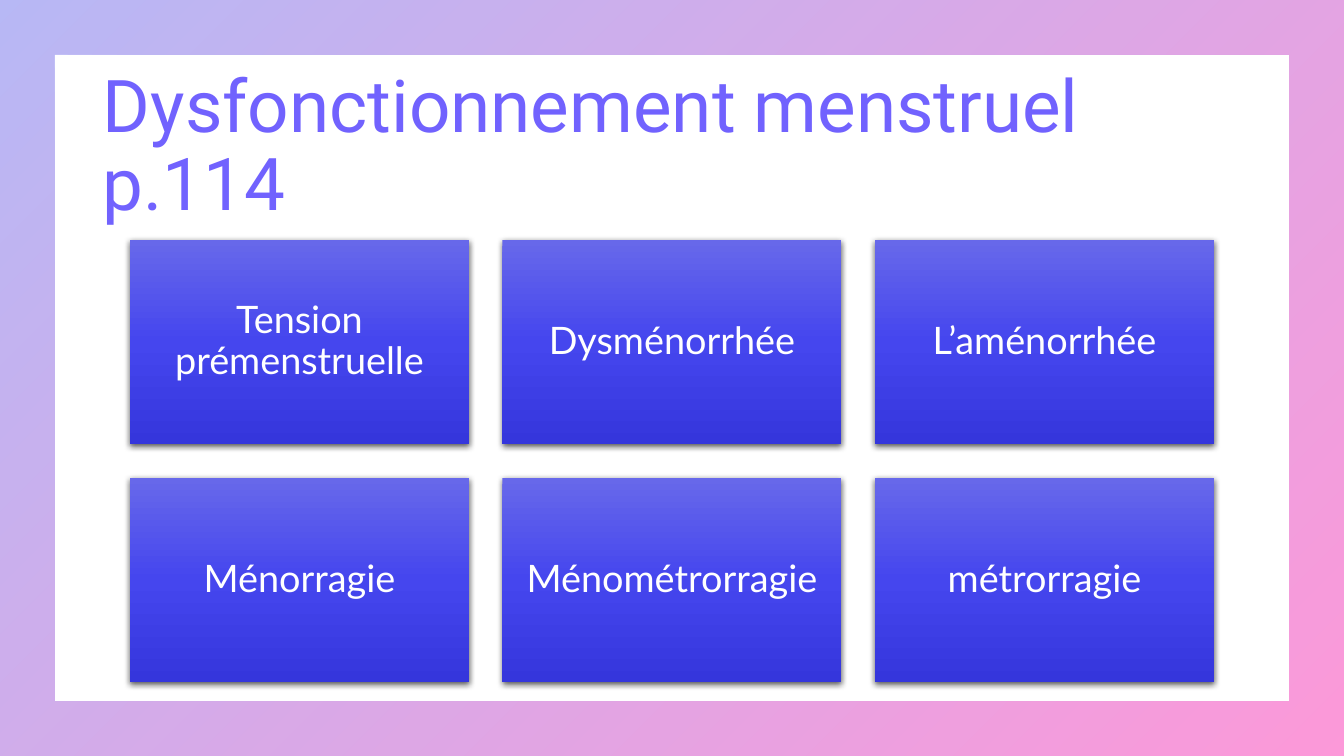
from pptx import Presentation
from pptx.dml.color import RGBColor
from pptx.enum.shapes import MSO_SHAPE
from pptx.enum.text import MSO_ANCHOR, PP_ALIGN
from pptx.oxml import parse_xml
from pptx.oxml.ns import nsdecls, qn
from pptx.util import Pt

FRAME, RECT = MSO_SHAPE.FRAME, MSO_SHAPE.RECTANGLE
MIDDLE, LEFT, CENTER = MSO_ANCHOR.MIDDLE, PP_ALIGN.LEFT, PP_ALIGN.CENTER
PX = 914400 / 100.8  # EMU in one px

# Gradient stops are (position %, colour, opacity %)
THEME = {
    "background": RGBColor(255, 255, 255),
    "frame": [(0, "4D4EE6", 40), (100, "F900A0", 40)],
    "tile": [(0, "6768EA", 100), (50, "4546EE", 100), (100, "3536DC", 100)],
    "title": [(0, "7162FE", 100), (100, "F900A0", 70)],
    "title_font": {"name": "Roboto", "size": Pt(52)},
    "tile_font": {"name": "Lato", "size": Pt(27)},
    "tile_text": RGBColor(255, 255, 255),
}


def set_gradient(s, fill, stops, angle):
    """Give the shape's only gradient its stops and clockwise angle."""
    fill.gradient()
    grad = s.element.find(".//" + qn("a:gradFill"))
    for child in list(grad):
        grad.remove(child)
    xml = "".join(
        f'<a:gs pos="{pos * 1000}"><a:srgbClr val="{color}">'
        f'<a:alpha val="{alpha * 1000}"/></a:srgbClr></a:gs>'
        for pos, color, alpha in stops)
    grad.append(parse_xml(f'<a:gsLst {nsdecls("a")}>{xml}</a:gsLst>'))
    grad.append(parse_xml(
        f'<a:lin {nsdecls("a")} ang="{angle * 60000}" scaled="0"/>'))


def write(s, text, font, align, margin):
    """Write one wrapped, vertically centred paragraph and return its run."""
    tf = s.text_frame
    frame_format = {"word_wrap": True, "vertical_anchor": MIDDLE,
                    "margin_left": margin, "margin_right": margin}
    for name, value in frame_format.items():
        setattr(tf, name, value)
    p = tf.paragraphs[0]
    p.alignment, p.line_spacing = align, 0.9
    r = p.add_run()
    r.text = text
    for name, value in font.items():
        setattr(r.font, name, value)
    return r


prs = Presentation()
prs.slide_width, prs.slide_height = round(1344 * PX), round(756 * PX)
slide = prs.slides.add_slide(prs.slide_layouts[6])
slide.background.fill.solid()
slide.background.fill.fore_color.rgb = THEME["background"]

# Border frame
s = slide.shapes.add_shape(FRAME, 0, 0, prs.slide_width, prs.slide_height)
s.adjustments[0] = 0.072
s.shadow.inherit = False
s.line.fill.background()
set_gradient(s, s.fill, THEME["frame"], 45)

# Title
s = slide.shapes.add_textbox(
    *(round(v * PX) for v in (93, 75, 1159, 146)))
r = write(s, "Dysfonctionnement menstruel p.114", THEME["title_font"],
          LEFT, round(10 * PX))
set_gradient(s, r.font.fill, THEME["title"], 0)

# Grid of tiles
COLUMNS = 3
GRID_LEFT, GRID_RIGHT, GRID_TOP = 130, 1214, 240
TILE_W, TILE_H, PITCH_Y = 339, 204, 238
PITCH_X = (GRID_RIGHT - GRID_LEFT - TILE_W) / (COLUMNS - 1)
disorders = ["Tension prémenstruelle", "Dysménorrhée", "L’aménorrhée",
             "Ménorragie", "Ménométrorragie", "métrorragie"]

for i, disorder in enumerate(disorders):
    row, col = divmod(i, COLUMNS)
    box = (GRID_LEFT + col * PITCH_X, GRID_TOP + row * PITCH_Y, TILE_W, TILE_H)
    s = slide.shapes.add_shape(RECT, *(round(v * PX) for v in box))
    s.line.fill.background()
    set_gradient(s, s.fill, THEME["tile"], 90)
    s.shadow.inherit = False
    s.element.spPr.find(qn("a:effectLst")).append(parse_xml(
        f'<a:outerShdw {nsdecls("a")} blurRad="{Pt(4.5)}" dist="{Pt(1.5)}" '
        'dir="5400000" algn="ctr" rotWithShape="0"><a:srgbClr val="000000">'
        '<a:alpha val="63000"/></a:srgbClr></a:outerShdw>'))
    r = write(s, disorder, THEME["tile_font"], CENTER, round(11 * PX))
    r.font.color.rgb = THEME["tile_text"]

prs.save("out.pptx")
